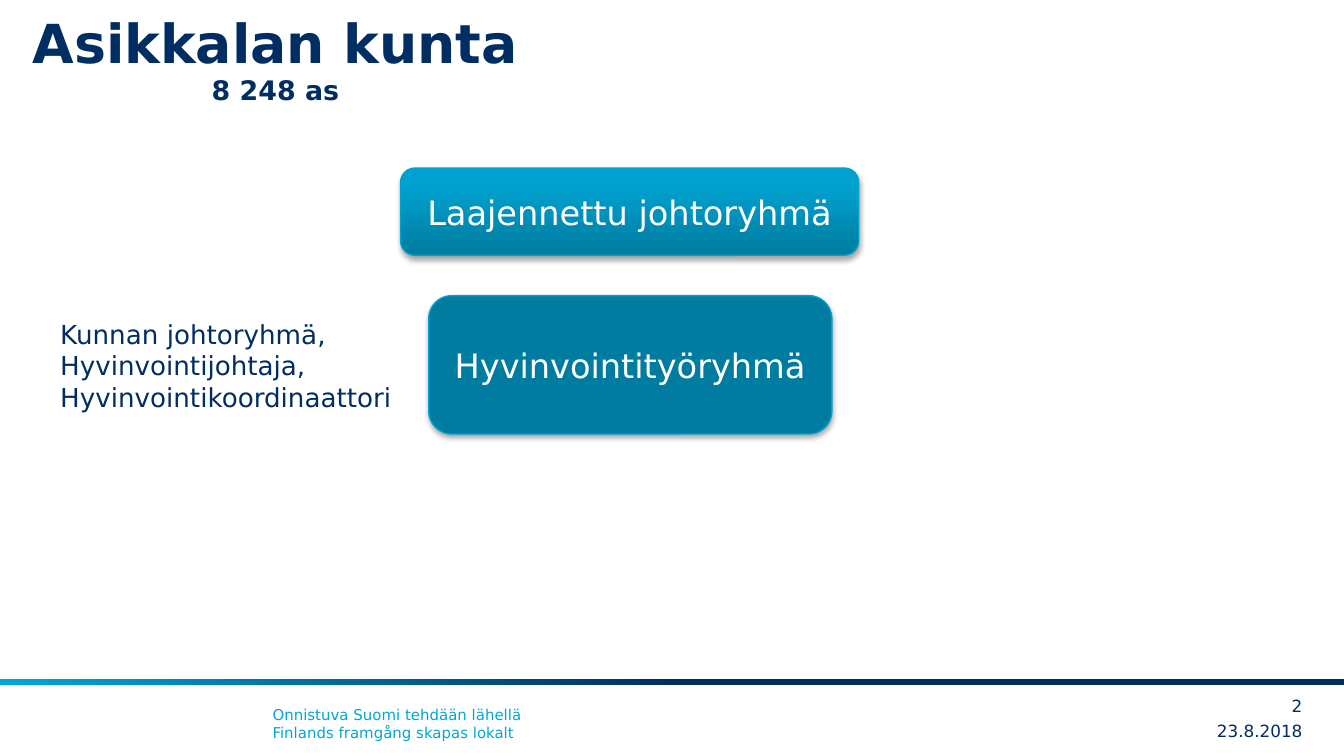
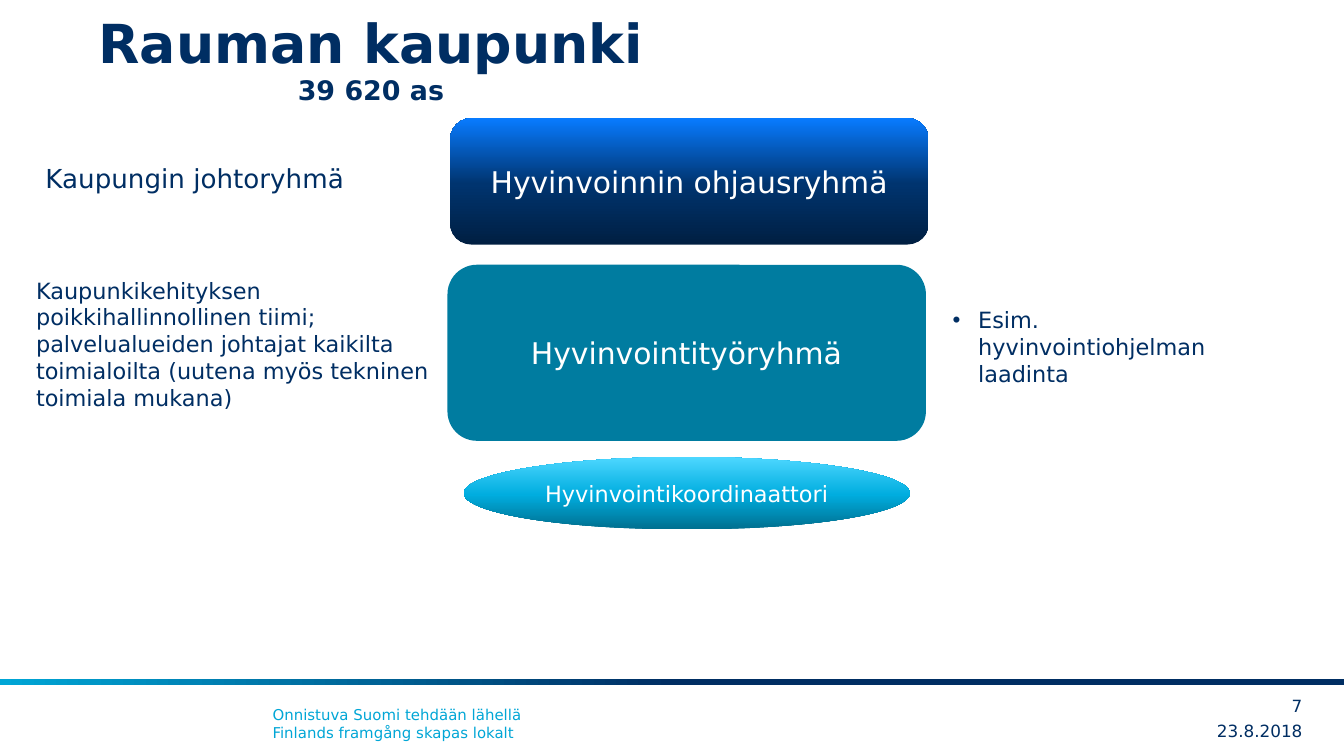
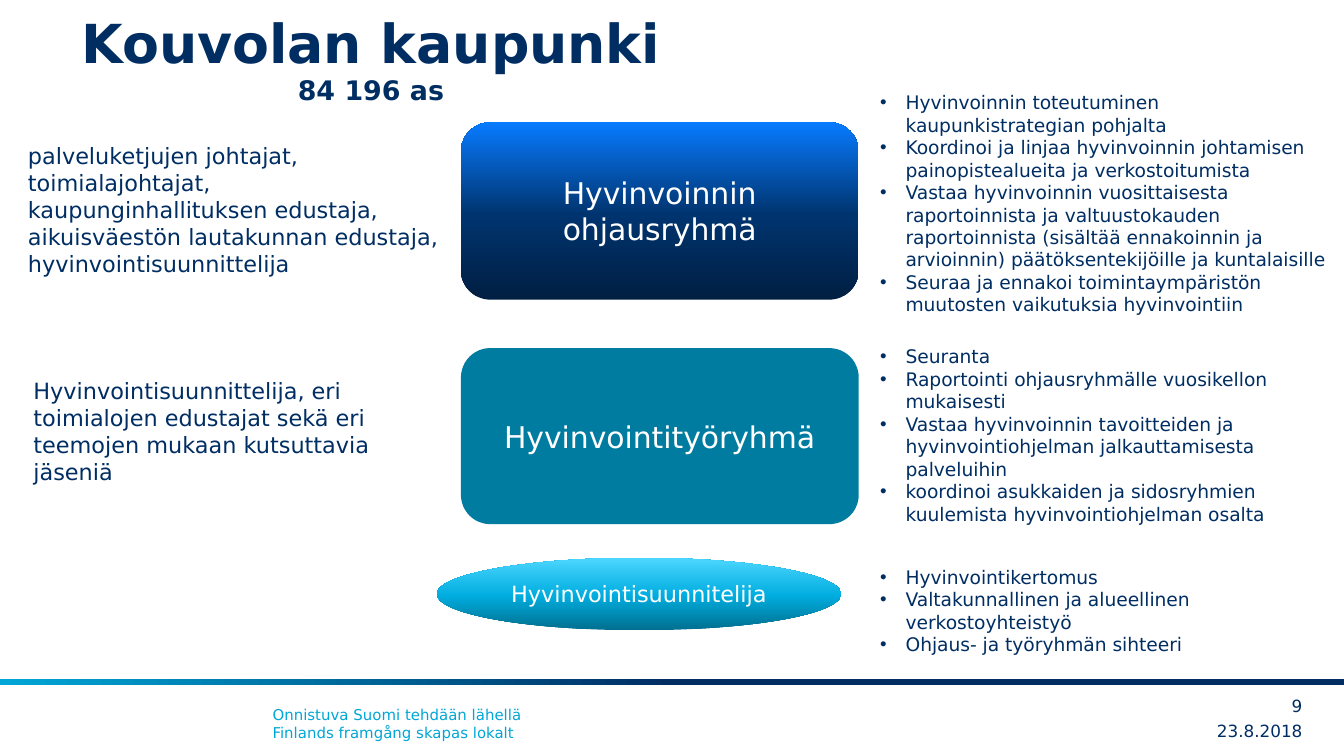
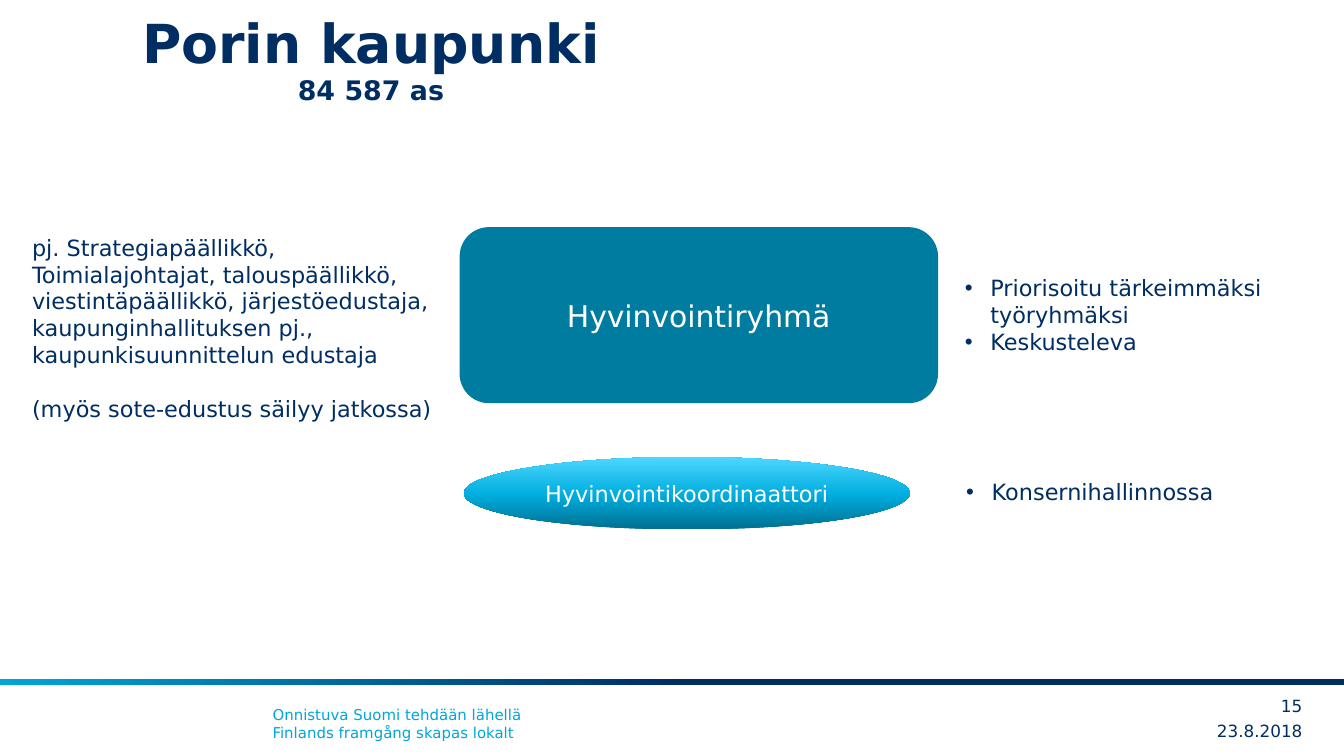
"""Builds four slides on how Finnish municipalities organise wellbeing work."""
from copy import deepcopy
from dataclasses import dataclass

from lxml import etree
from pptx import Presentation
from pptx.dml.color import RGBColor
from pptx.enum import shapes, text
from pptx.oxml import ns
from pptx.util import Inches, Pt

NAVY = RGBColor(0x00, 0x2E, 0x63)
CYAN = RGBColor(0x00, 0xA6, 0xD6)
TEAL = RGBColor(0x00, 0x7C, 0xA0)
EDGE = RGBColor(0x00, 0xA2, 0xD1)
WHITE = RGBColor(0xFF, 0xFF, 0xFF)
BLACK = RGBColor(0x00, 0x00, 0x00)

BAND_FADE = ((0.5, NAVY), (1, CYAN))
TEAL_FADE = ((0, TEAL), (0.8, RGBColor(0x00, 0xA1, 0xCF)), (1, RGBColor(0x00, 0xA2, 0xD0)))
NAVY_FADE = ((0, RGBColor(0x00, 0x1F, 0x42)), (0.48, RGBColor(0x00, 0x34, 0x6F)),
             (1, RGBColor(0x08, 0x7B, 0xFF)))
SKY_FADE = ((0, RGBColor(0x00, 0x6F, 0x8F)), (0.48, RGBColor(0x00, 0xAD, 0xDF)),
            (1, RGBColor(0x4D, 0xD7, 0xFF)))

FONT = "DejaVu Sans"
BULLET_FONT = "Arial"
DATE = "23.8.2018"
SLOGAN = "Onnistuva Suomi tehdään lähellä\vFinlands framgång skapas lokalt"
PAGE_WIDTH = Inches(10)
PAGE_HEIGHT = PAGE_WIDTH * 9 // 16
INSETS = (0.1, 0.05, 0.1, 0.05)
NO_INSETS = (0, 0, 0, 0)
BULLET_INDENT = Inches(0.19)
RECT = shapes.MSO_SHAPE.RECTANGLE
ROUNDED = shapes.MSO_SHAPE.ROUNDED_RECTANGLE
OVAL = shapes.MSO_SHAPE.OVAL
LEFT, CENTER, RIGHT = text.PP_ALIGN.LEFT, text.PP_ALIGN.CENTER, text.PP_ALIGN.RIGHT
TOP, MIDDLE, BOTTOM = text.MSO_ANCHOR.TOP, text.MSO_ANCHOR.MIDDLE, text.MSO_ANCHOR.BOTTOM

Place = tuple[float, float, float, float]
Fade = tuple[tuple[float, RGBColor], ...]


@dataclass(frozen=True)
class Group:
    """A filled shape that names a working group or a role."""
    label: str
    place: Place
    fill: RGBColor | Fade = TEAL
    outline: int = ROUNDED
    size: float = 16
    raised: bool = False


@dataclass(frozen=True)
class Note:
    """Members or tasks written beside a group."""
    lines: tuple[str, ...]
    place: Place
    size: float = 12
    bulleted: bool = False
    last_gap: float = 0


@dataclass(frozen=True)
class Municipality:
    """Everything shown on one slide."""
    name: str
    population: str
    number: int
    groups: tuple[Group, ...]
    notes: tuple[Note, ...]
    title_width: float = 5.12


MUNICIPALITIES = (
    Municipality(
        "Asikkalan kunta", "8 248 as", 2,
        (Group("Hyvinvointityöryhmä", (3.19, 2.2, 3, 1.03), size=18, raised=True),
         Group("Laajennettu johtoryhmä", (2.98, 1.25, 3.41, 0.65), TEAL_FADE, size=18, raised=True)),
        (Note(("Kunnan johtoryhmä, Hyvinvointijohtaja, Hyvinvointikoordinaattori",),
              (0.35, 2.32, 2.76, 0.81), 14),),
        title_width=3.7),
    Municipality(
        "Rauman kaupunki", "39 620 as", 7,
        (Group("Hyvinvoinnin ohjausryhmä", (3.35, 0.88, 3.56, 0.94), NAVY_FADE),
         Group("Hyvinvointityöryhmä", (3.33, 1.97, 3.56, 1.31)),
         Group("Hyvinvointikoordinaattori", (3.45, 3.4, 3.32, 0.54), SKY_FADE, OVAL, 12)),
        (Note(("Kaupungin johtoryhmä",), (0.24, 1.16, 2.6, 0.34), 14),
         Note(("Kaupunkikehityksen poikkihallinnollinen tiimi; palvelualueiden johtajat kaikilta "
               "toimialoilta (uutena myös tekninen toimiala mukana)",), (0.17, 2.01, 3.39, 1.11)),
         Note(("Esim. hyvinvointiohjelman laadinta",), (6.99, 2.23, 2.2, 0.71), bulleted=True))),
    Municipality(
        "Kouvolan kaupunki", "84 196 as", 9,
        (Group("Hyvinvoinnin ohjausryhmä", (3.43, 0.91, 2.96, 1.32), NAVY_FADE),
         Group("Hyvinvointityöryhmä", (3.43, 2.59, 2.96, 1.31)),
         Group("Hyvinvointisuunnitelija", (3.25, 4.15, 3.01, 0.54), SKY_FADE, OVAL, 12)),
        (Note(("palveluketjujen johtajat, toimialajohtajat,", "kaupunginhallituksen edustaja,",
               "aikuisväestön lautakunnan edustaja,", "hyvinvointisuunnittelija"),
              (0.11, 1.01, 3.36, 1.11)),
         Note(("Hyvinvointisuunnittelija, eri toimialojen edustajat sekä eri teemojen mukaan "
               "kutsuttavia jäseniä",), (0.15, 2.76, 3.28, 0.91)),
         Note(("Hyvinvoinnin toteutuminen kaupunkistrategian pohjalta",
               "Koordinoi ja linjaa hyvinvoinnin johtamisen painopistealueita ja verkostoitumista",
               "Vastaa hyvinvoinnin vuosittaisesta raportoinnista ja valtuustokauden raportoinnista "
               "(sisältää ennakoinnin ja arvioinnin) päätöksentekijöille ja kuntalaisille",
               "Seuraa ja ennakoi toimintaympäristön muutosten vaikutuksia hyvinvointiin"),
              (6.45, 0.63, 3.56, 1.78), 10, True),
         Note(("Seuranta", "Raportointi ohjausryhmälle vuosikellon mukaisesti",
               "Vastaa hyvinvoinnin tavoitteiden ja hyvinvointiohjelman jalkauttamisesta palveluihin",
               "koordinoi asukkaiden ja sidosryhmien kuulemista hyvinvointiohjelman osalta"),
              (6.45, 2.52, 3.74, 1.45), 10, True),
         Note(("Hyvinvointikertomus", "Valtakunnallinen ja alueellinen verkostoyhteistyö",
               "Ohjaus- ja työryhmän sihteeri"), (6.45, 4.16, 3.15, 1.11), 10, True))),
    Municipality(
        "Porin kaupunki", "84 587 as", 15,
        (Group("Hyvinvointiryhmä", (3.42, 1.69, 3.56, 1.31)),
         Group("Hyvinvointikoordinaattori", (3.45, 3.4, 3.32, 0.54), SKY_FADE, OVAL, 12)),
        (Note(("pj. Strategiapäällikkö,",
               "Toimialajohtajat, talouspäällikkö, viestintäpäällikkö, järjestöedustaja, "
               "kaupunginhallituksen pj., kaupunkisuunnittelun edustaja",
               "(myös sote-edustus säilyy jatkossa)"), (0.14, 1.69, 3.27, 1.72), last_gap=14.4),
         Note(("Priorisoitu tärkeimmäksi työryhmäksi", "Keskusteleva"),
              (7.08, 1.99, 2.49, 0.71), bulleted=True),
         Note(("Konsernihallinnossa",), (7.09, 3.51, 2.52, 0.3), bulleted=True))),
)


def add_bullet(para) -> None:
    """Give a paragraph a hanging round bullet."""
    properties = para._p.get_or_add_pPr()
    properties.set("marL", str(BULLET_INDENT))
    properties.set("indent", str(-BULLET_INDENT))
    etree.SubElement(properties, ns.qn("a:buFont")).set("typeface", BULLET_FONT)
    etree.SubElement(properties, ns.qn("a:buChar")).set("char", "•")


def write(box, lines: tuple[str, ...], *, size: float, color: RGBColor = NAVY, bold: bool = False,
          align: int = LEFT, anchor: int = TOP, insets: Place = INSETS, bulleted: bool = False):
    """Fill a box with one paragraph per line and return its text frame."""
    frame = box.text_frame
    frame.word_wrap = True
    frame.vertical_anchor = anchor
    frame.margin_left, frame.margin_top, frame.margin_right, frame.margin_bottom = map(Inches, insets)
    for index, line in enumerate(lines):
        para = frame.paragraphs[0] if index == 0 else frame.add_paragraph()
        para.text = line
        para.alignment = align
        if bulleted:
            add_bullet(para)
        for span in para.runs:
            span.font.name, span.font.size, span.font.bold = FONT, Pt(size), bold
            span.font.color.rgb = color
    return frame


def add_text(page, lines: tuple[str, ...], place: Place, **style):
    """Add a text box and return its text frame."""
    return write(page.shapes.add_textbox(*map(Inches, place)), lines, **style)


def paint(shape, fill: RGBColor | Fade, angle: float = 90) -> None:
    """Fill a shape with a plain colour or a fade."""
    if isinstance(fill, RGBColor):
        shape.fill.solid()
        shape.fill.fore_color.rgb = fill
        return
    shape.fill.gradient()
    shape.fill.gradient_angle = angle
    stops = shape.element.spPr.find(f".//{ns.qn('a:gsLst')}")
    for _ in fill[2:]:
        stops.append(deepcopy(stops[-1]))
    for stop, (position, color) in zip(shape.fill.gradient_stops, fill):
        stop.position = position
        stop.color.rgb = color


def add_shape(page, outline: int, place: Place, fill: RGBColor | Fade, angle: float = 90):
    """Add a filled shape without line or shadow."""
    shape = page.shapes.add_shape(outline, *map(Inches, place))
    shape.shadow.inherit = False
    shape.line.fill.background()
    paint(shape, fill, angle)
    return shape


def raise_shape(shape) -> None:
    """Give a shape a thin edge and a soft shadow below."""
    shape.line.color.rgb = EDGE
    shape.line.width = Pt(0.75)
    effects = shape.element.spPr.find(ns.qn("a:effectLst"))
    shadow = etree.SubElement(effects, ns.qn("a:outerShdw"), blurRad=str(Pt(3.1)),
                              dist=str(Pt(1.8)), dir="5400000", rotWithShape="0")
    color = etree.SubElement(shadow, ns.qn("a:srgbClr"), val=str(BLACK))
    etree.SubElement(color, ns.qn("a:alpha"), val="35000")


def add_group(page, group: Group) -> None:
    """Draw a group with its label."""
    shape = add_shape(page, group.outline, group.place, group.fill)
    if group.raised:
        raise_shape(shape)
    write(shape, (group.label,), size=group.size, color=WHITE, align=CENTER, anchor=MIDDLE)


def add_note(page, note: Note) -> None:
    """Write a note beside a group."""
    frame = add_text(page, note.lines, note.place, size=note.size, bulleted=note.bulleted)
    if note.last_gap:
        frame.paragraphs[-1].space_before = Pt(note.last_gap)


def add_frame(page, town: Municipality) -> None:
    """Draw the band, footer and title that all slides share."""
    add_shape(page, RECT, (0, 5.05, 10, 0.05), BAND_FADE, 180)
    add_text(page, (SLOGAN,), (1.93, 5.2, 6.54, 0.37), size=8, color=CYAN)
    title = add_text(page, (f"{town.name}\v{town.population}",), (0.2, 0.27, town.title_width, 0.57),
                     size=28.8, bold=True, align=CENTER, anchor=BOTTOM, insets=(0, 0.05, 0, 0.05))
    title.paragraphs[0].line_spacing = 0.95
    title.paragraphs[0].runs[1].font.size = Pt(14.4)
    for label, place in ((DATE, (8.7, 5.33, 0.99, 0.22)), (str(town.number), (9.26, 5.14, 0.43, 0.22))):
        add_text(page, (label,), place, size=9, align=RIGHT, anchor=MIDDLE, insets=NO_INSETS)


def main() -> None:
    """Build and save the deck."""
    deck = Presentation()
    deck.slide_width, deck.slide_height = PAGE_WIDTH, PAGE_HEIGHT
    for town in MUNICIPALITIES:
        page = deck.slides.add_slide(deck.slide_layouts[6])
        add_frame(page, town)
        for group in town.groups:
            add_group(page, group)
        for note in town.notes:
            add_note(page, note)
    deck.save("out.pptx")


if __name__ == "__main__":
    main()
